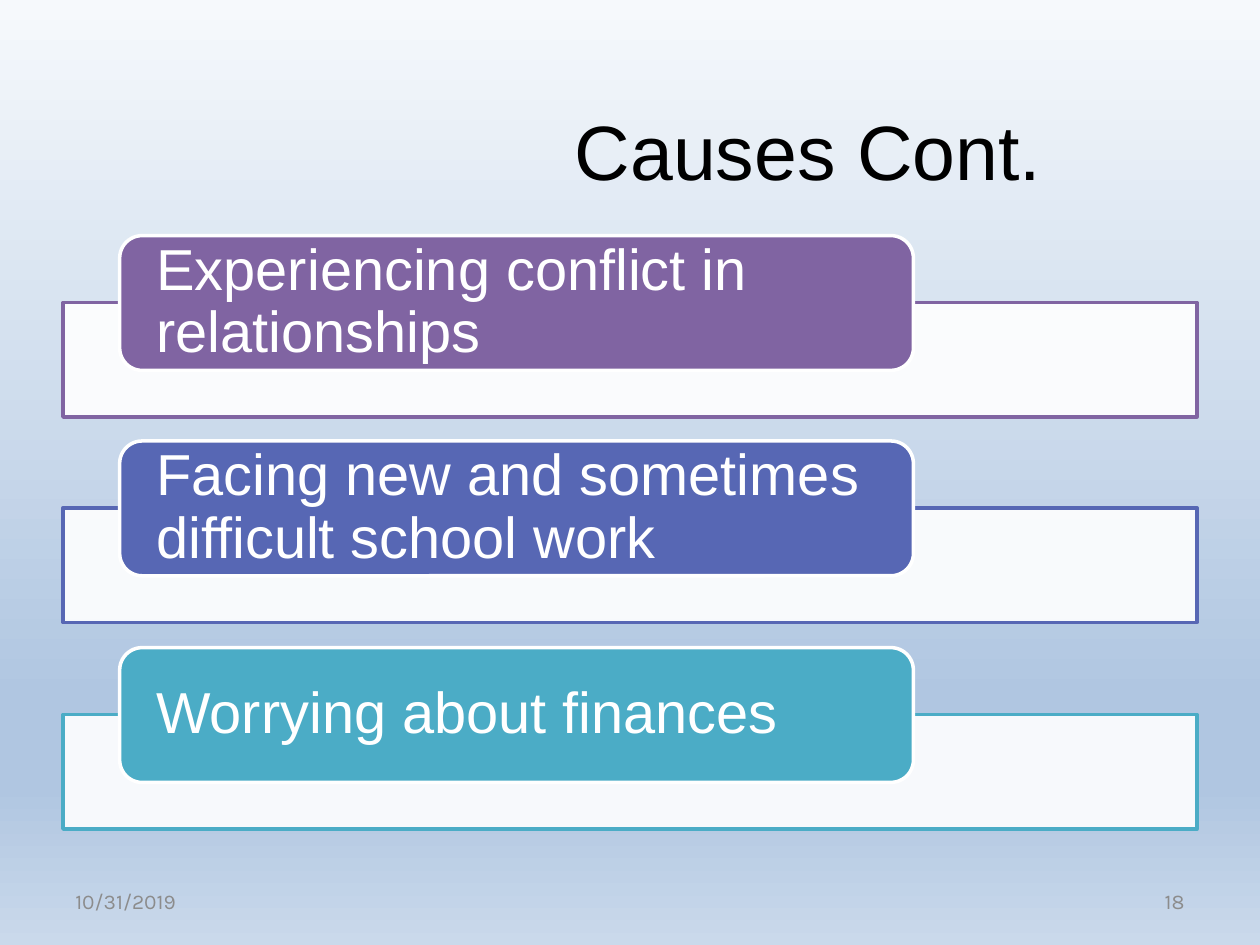
import dataclasses

import lxml.etree
import pptx
import pptx.dml.color
import pptx.enum.shapes
import pptx.enum.text
import pptx.oxml.ns
import pptx.util

Inches = pptx.util.Inches
Pt = pptx.util.Pt
RGB = pptx.dml.color.RGBColor.from_string
ALIGN = pptx.enum.text.PP_ALIGN
MIDDLE = pptx.enum.text.MSO_ANCHOR.MIDDLE
SHAPE = pptx.enum.shapes.MSO_SHAPE
qn = pptx.oxml.ns.qn


@dataclasses.dataclass(frozen=True)
class Theme:
    black: str = "000000"
    white: str = "FFFFFF"
    grey: str = "8C8C8C"
    accents: tuple = ("8064A2", "5767B4", "4BACC6")
    backdrop: tuple = ((0, "F6F9FC"), (74, "B0C6E1"), (83, "B0C6E1"), (100, "CAD9EB"))
    main_font: str = "Arial"
    footer_font: str = "Karla"
    title_size: int = 44
    cause_size: int = 33
    footer_size: int = 12
    outline: int = 2


def write_text(frame, text, *, font, size, color, align=ALIGN.LEFT, spacing=None, side_inset=0.1, edge_inset=0.05):
    frame.word_wrap = True
    frame.auto_size = pptx.enum.text.MSO_AUTO_SIZE.NONE
    frame.vertical_anchor = MIDDLE
    frame.margin_left = frame.margin_right = Inches(side_inset)
    frame.margin_top = frame.margin_bottom = Inches(edge_inset)
    para = frame.paragraphs[0]
    para.alignment = align
    para.line_spacing = spacing
    span = para.add_run()
    span.text = text
    span.font.name = font
    span.font.size = Pt(size)
    span.font.color.rgb = RGB(color)


class Builder:
    def __init__(self, page, theme):
        self.page = page
        self.theme = theme

    def background(self):
        fill = self.page.background.fill
        fill.gradient()
        fill.gradient_angle = 270
        stops = next(self.page.element.iter(qn("a:gsLst")))
        for stop in list(stops):
            stops.remove(stop)
        for percent, color in self.theme.backdrop:
            stop = lxml.etree.SubElement(stops, qn("a:gs"), pos=str(percent * 1000))
            lxml.etree.SubElement(stop, qn("a:srgbClr"), val=color)

    def title(self, text, left, top, width, height):
        box = self.page.shapes.title
        box.left, box.top = Inches(left), Inches(top)
        box.width, box.height = Inches(width), Inches(height)
        write_text(box.text_frame, text, font=self.theme.main_font, size=self.theme.title_size,
                   color=self.theme.black, align=ALIGN.CENTER)

    def panel(self, kind, left, top, width, height, fill, line, opacity=None):
        shape = self.page.shapes.add_shape(kind, Inches(left), Inches(top), Inches(width), Inches(height))
        shape.shadow.inherit = False
        shape.fill.solid()
        shape.fill.fore_color.rgb = RGB(fill)
        if opacity is not None:
            color = shape.element.spPr.find(qn("a:solidFill")).find(qn("a:srgbClr"))
            lxml.etree.SubElement(color, qn("a:alpha"), val=str(opacity * 1000))
        shape.line.color.rgb = RGB(line)
        shape.line.width = Pt(self.theme.outline)
        return shape

    def cause(self, text, top, accent):
        white = self.theme.white
        self.panel(SHAPE.RECTANGLE, 0.5, top + 0.53, 9, 0.91, white, accent, opacity=90)
        label = self.panel(SHAPE.ROUNDED_RECTANGLE, 0.95, top, 6.3, 1.07, accent, white)
        write_text(label.text_frame, text, font=self.theme.main_font, size=self.theme.cause_size,
                   color=white, spacing=0.9, side_inset=0.24, edge_inset=0)

    def footer(self, text, left, align):
        box = self.page.shapes.add_textbox(Inches(left), Inches(6.95), Inches(2.33), Inches(0.4))
        write_text(box.text_frame, text, font=self.theme.footer_font, size=self.theme.footer_size,
                   color=self.theme.grey, align=align)


def main():
    deck = pptx.Presentation()
    deck.slide_width, deck.slide_height = Inches(10), Inches(7.5)
    theme = Theme()
    builder = Builder(deck.slides.add_slide(deck.slide_layouts[5]), theme)
    builder.background()
    builder.title("Causes Cont.", 3.08, 0.67, 6.67, 1.03)
    causes = (
        "Experiencing conflict in relationships",
        "Facing new and sometimes difficult school work",
        "Worrying about finances",
    )
    first_top, pitch = 1.87, 1.635
    for index, (text, accent) in enumerate(zip(causes, theme.accents)):
        builder.cause(text, round(first_top + index * pitch, 2), accent)
    builder.footer("10/31/2019", 0.5, ALIGN.LEFT)
    builder.footer("18", 7.17, ALIGN.RIGHT)
    deck.save("out.pptx")


if __name__ == "__main__":
    main()
